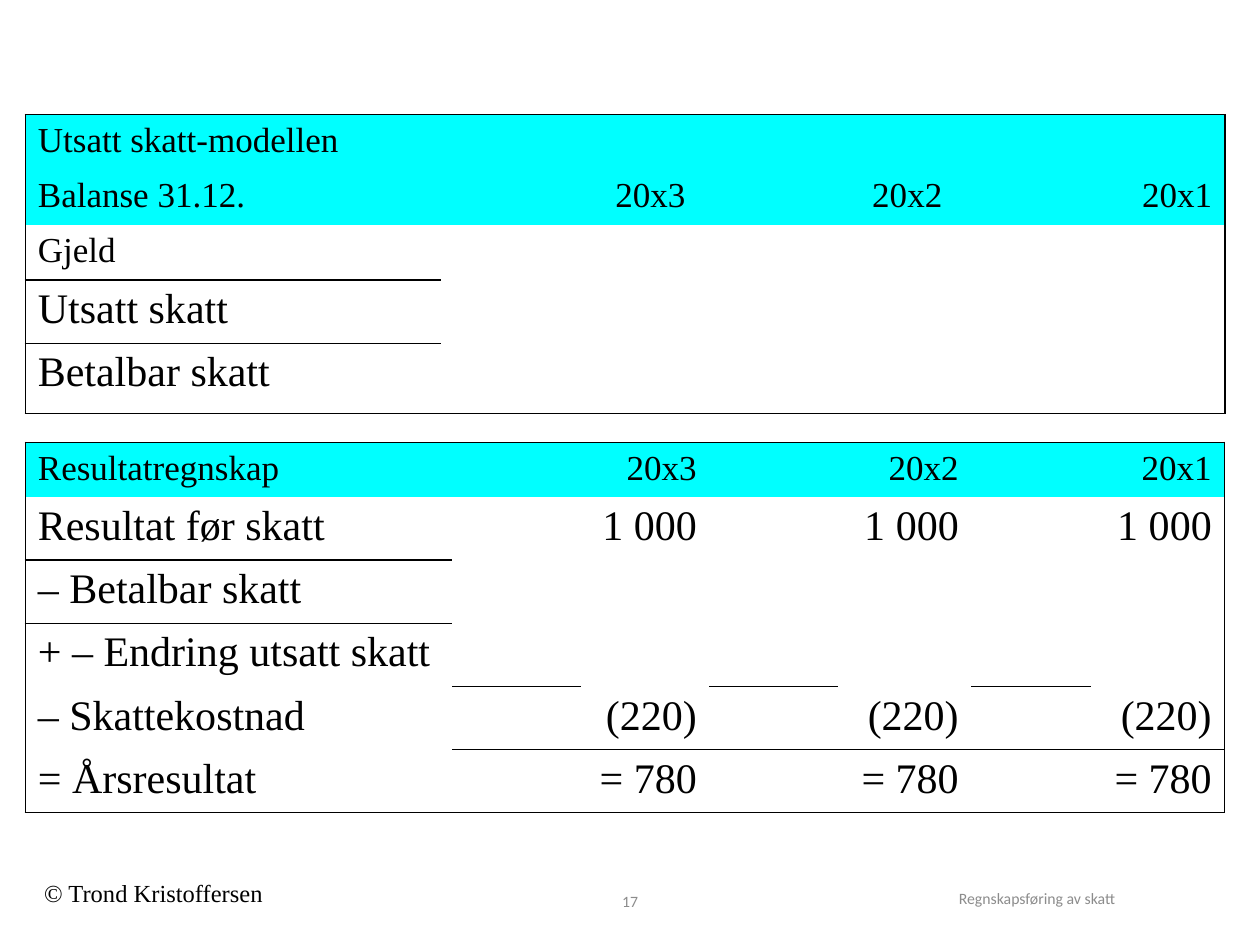
from dataclasses import dataclass

from lxml import etree
from pptx import Presentation
from pptx.dml.color import RGBColor
from pptx.enum import text as t
from pptx.oxml import ns
from pptx.util import Cm, Pt

BLACK = RGBColor(0x00, 0x00, 0x00)
CYAN = RGBColor(0x00, 0xFF, 0xFF)
GRAY = RGBColor(0x8C, 0x8C, 0x8C)
SERIF, SANS = "Times New Roman", "Calibri"
LEFT = 0.51
PLAIN = "{2D5ABB26-0587-4C30-8999-92F81FD0307C}"  # table style without grid
YEARS = ("20x3", "20x2", "20x1")


@dataclass
class Row:
    label: str
    height: float
    size: int = 24
    values: tuple[str, ...] = ()
    head: bool = False


@dataclass
class Grid:
    top: float
    widths: tuple[float, ...]
    rows: list[Row]
    rules: set[tuple[int, int]]  # cells with a line below, as (row, column)


@dataclass
class Note:
    text: str
    box: tuple[float, float, float, float]
    size: int = 9
    font: str = SANS
    color: RGBColor = GRAY
    align: t.PP_ALIGN = t.PP_ALIGN.LEFT
    anchor: t.MSO_ANCHOR = t.MSO_ANCHOR.MIDDLE


GRIDS = [
    Grid(2.31, (8.38, 1.98, 3.2, 1.98, 3.2, 2.21, 3.23), [
        Row("Utsatt skatt-modellen", 1.11, 20, head=True),
        Row("Balanse 31.12.", 1.11, 20, YEARS, head=True),
        Row("Gjeld", 1.11, 20),
        Row("Utsatt skatt", 1.28),
        Row("Betalbar skatt", 1.42),
    ], {(2, 0)}),
    Grid(8.92, (8.61, 2.59, 2.59, 2.59, 2.69, 2.41, 2.69), [
        Row("Resultatregnskap", 1.1, 20, YEARS, head=True),
        Row("Resultat før skatt", 1.27, values=("1 000",) * 3),
        Row("– Betalbar skatt", 1.27),
        Row("+ – Endring utsatt skatt", 1.27),
        Row("– Skattekostnad", 1.27, values=("(220)",) * 3),
        Row("= Årsresultat", 1.27, values=("= 780",) * 3),
    ], {(1, 0), (3, 1), (3, 3), (3, 5), (4, 2), (4, 4), (4, 6)}),
]

NOTES = [
    Note("© Trond Kristoffersen", (0.64, 17.58, 5.28, 0.84), 14, SERIF, BLACK,
         anchor=t.MSO_ANCHOR.TOP),
    Note("Regnskapsføring av skatt", (19.08, 17.6, 5.72, 1.02)),
    Note("17", (8.41, 17.65, 8.59, 1.02), align=t.PP_ALIGN.CENTER),
]


def style(par, size: int, font: str, color: RGBColor, align: t.PP_ALIGN) -> None:
    par.font.size, par.font.name = Pt(size), font
    par.font.color.rgb = color
    par.alignment = align


def write(cell, words: str, size: int, align: t.PP_ALIGN) -> None:
    par = cell.text_frame.paragraphs[0]
    par.text = words
    style(par, size, SERIF, BLACK, align)
    gap = etree.Element(ns.qn("a:spcBef"))
    etree.SubElement(gap, ns.qn("a:spcPct"), val="20000")
    par._p.get_or_add_pPr().insert(0, gap)


def edge(cell, side: str) -> None:
    """Add a black 1 pt border on side L, R, T or B."""
    line = etree.SubElement(cell._tc.get_or_add_tcPr(), ns.qn(f"a:ln{side}"),
                            w=str(Pt(1)))
    fill = etree.SubElement(line, ns.qn("a:solidFill"))
    etree.SubElement(fill, ns.qn("a:srgbClr"), val=str(BLACK))


def draw_grid(slide, grid: Grid) -> None:
    high, wide = len(grid.rows), len(grid.widths)
    frame = slide.shapes.add_table(
        high, wide, Cm(LEFT), Cm(grid.top), Cm(sum(grid.widths)),
        Cm(sum(row.height for row in grid.rows)))
    table = frame.table
    table.first_row = table.horz_banding = False
    table._tbl.tblPr.find(ns.qn("a:tableStyleId")).text = PLAIN
    for col, width in zip(table.columns, grid.widths):
        col.width = Cm(width)

    for r, row in enumerate(grid.rows):
        table.rows[r].height = Cm(row.height)
        write(table.cell(r, 0), row.label, row.size, t.PP_ALIGN.LEFT)
        for i, value in enumerate(row.values):
            write(table.cell(r, 2 * i + 2), value, row.size, t.PP_ALIGN.RIGHT)
        for c in range(wide):
            cell = table.cell(r, c)
            sides = {
                "L": c == 0,
                "R": c == wide - 1,
                "T": r == 0 or (r - 1, c) in grid.rules,
                "B": r == high - 1 or (r, c) in grid.rules,
            }
            for side, shown in sides.items():
                if shown:
                    edge(cell, side)
            if row.head:
                cell.fill.solid()
                cell.fill.fore_color.rgb = CYAN
            else:
                cell.fill.background()


def draw_note(slide, note: Note) -> None:
    frame = slide.shapes.add_textbox(*map(Cm, note.box)).text_frame
    frame.word_wrap = True
    frame.vertical_anchor = note.anchor
    par = frame.paragraphs[0]
    par.text = note.text
    style(par, note.size, note.font, note.color, note.align)


def main() -> None:
    deck = Presentation()
    deck.slide_width, deck.slide_height = Cm(25.4), Cm(19.05)
    slide = deck.slides.add_slide(deck.slide_layouts.get_by_name("Blank"))
    for note in NOTES:
        draw_note(slide, note)
    for grid in GRIDS:
        draw_grid(slide, grid)
    deck.save("out.pptx")


if __name__ == "__main__":
    main()
